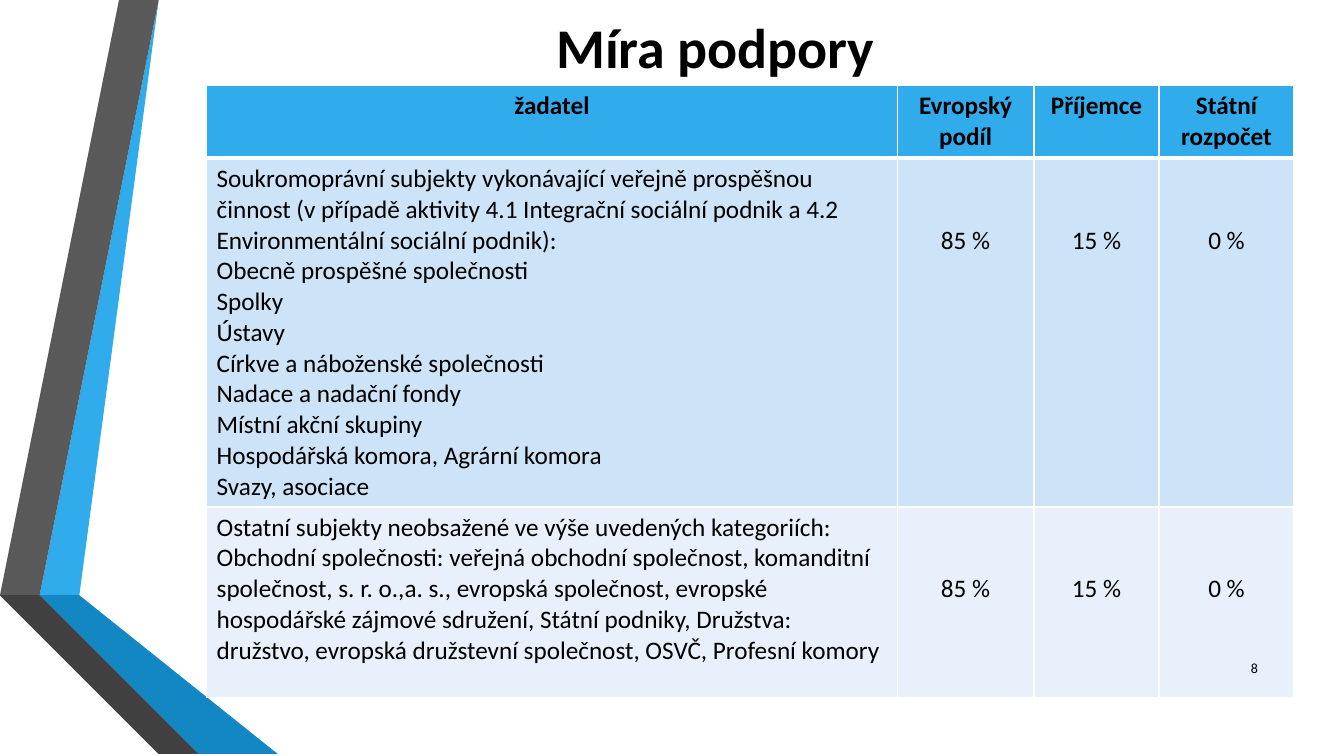
import pptx
import pptx.util
import pptx.dml.color
import pptx.enum.text
import pptx.oxml

Cm = pptx.util.Cm
Pt = pptx.util.Pt
ALIGN = pptx.enum.text.PP_ALIGN
ANCHOR = pptx.enum.text.MSO_ANCHOR
NS = "http://schemas.openxmlformats.org/drawingml/2006/main"

COLORS = {
    "black": "000000", "white": "FFFFFF", "blue": "30ACEC",
    "mid_blue": "1287C3", "deep_blue": "0C5A82", "grey": "595959",
    "dark_grey": "404040", "shadow_grey": "262626",
    "band_dark": "CDE3F8", "band_light": "E8F1FB",
}

RIBBONS = [
    ("blue", [(1.27, 14.68), (1.96, 14.81), (4.39, 0), (3.68, 0)]),
    ("grey", [(3.53, 0), (2.82, 0), (0.41, 14.55), (1.12, 14.66)]),
    ("shadow_grey", [(0.41, 14.55), (3.68, 19.05), (3.84, 19.05)]),
    ("deep_blue", [(1.27, 14.71), (5.28, 19.05), (5.44, 19.05)]),
    ("mid_blue", [(1.27, 14.68), (5.44, 19.05), (7.19, 19.05), (1.96, 14.81)]),
    ("dark_grey", [(5.13, 19.05), (1.22, 14.81), (1.09, 14.68), (1.12, 14.66),
                   (0.41, 14.55), (3.84, 19.05)]),
]

HEADERS = ["žadatel", "Evropský podíl", "Příjemce", "Státní rozpočet"]
SHARES = ["85 %", "15 %", "0 %"]
NONPROFITS = [
    "Soukromoprávní subjekty vykonávající veřejně prospěšnou činnost "
    "(v případě aktivity 4.1 Integrační sociální podnik a 4.2 "
    "Environmentální sociální podnik):",
    "Obecně prospěšné společnosti",
    "Spolky",
    "Ústavy",
    "Církve a náboženské společnosti",
    "Nadace a nadační fondy",
    "Místní akční skupiny",
    "Hospodářská komora, Agrární komora",
    "Svazy, asociace",
]
OTHERS = [
    "Ostatní subjekty neobsažené ve výše uvedených kategoriích:",
    "Obchodní společnosti: veřejná obchodní společnost, komanditní "
    "společnost, s. r. o.,a. s., evropská společnost, evropské "
    "hospodářské zájmové sdružení, Státní podniky, Družstva: "
    "družstvo, evropská družstevní společnost, OSVČ, Profesní komory",
]
COL_WIDTHS = [17.4, 3.45, 3.15, 3.4]
ROW_HEIGHTS = [1.83, 8.77, 4.8]


def rgb(name):
    return pptx.dml.color.RGBColor.from_string(COLORS[name])


def apply(obj, values):
    for name, value in values.items():
        setattr(obj, name, value)


def write(tf, lines, align, size, bold=False):
    for i, line in enumerate(lines):
        p = tf.paragraphs[0] if i == 0 else tf.add_paragraph()
        p.alignment = align
        r = p.add_run()
        r.text = line
        apply(r.font, {"name": "Calibri", "size": Pt(size), "bold": bold})
        r.font.color.rgb = rgb("black")


def add_ribbon(s, color, points):
    builder = s.shapes.build_freeform(*points[0], scale=Cm(1))
    builder.add_line_segments(points[1:], close=True)
    sp = builder.convert_to_shape()
    sp.shadow.inherit = False
    sp.fill.solid()
    sp.fill.fore_color.rgb = rgb(color)
    sp.line.fill.background()


def set_borders(cell, widths):
    tc_pr = cell._tc.get_or_add_tcPr()
    for i, (side, width) in enumerate(widths.items()):
        tc_pr.insert(i, pptx.oxml.parse_xml(
            f'<a:ln{side} xmlns:a="{NS}" w="{Pt(width)}"><a:solidFill>'
            f'<a:srgbClr val="{COLORS["white"]}"/></a:solidFill></a:ln{side}>'))


def fill_cell(cell, row, lines, align, color, top):
    apply(cell, {"margin_left": Cm(0.25), "margin_right": Cm(0.25),
                 "margin_top": Cm(top), "margin_bottom": Cm(0.13),
                 "vertical_anchor": ANCHOR.TOP})
    write(cell.text_frame, lines, align, 18, bold=row == 0)
    cell.fill.solid()
    cell.fill.fore_color.rgb = rgb(color)
    set_borders(cell, {"L": 1, "R": 1, "T": 3 if row == 1 else 1,
                       "B": 3 if row == 0 else 1})


def add_support_table(s):
    rows = [[[h] for h in HEADERS]]
    rows += [[group] + [[share] for share in SHARES]
             for group in (NONPROFITS, OTHERS)]
    table = s.shapes.add_table(len(rows), len(HEADERS), Cm(5.21), Cm(2.16),
                               Cm(sum(COL_WIDTHS)), Cm(sum(ROW_HEIGHTS))).table
    for column, width in zip(table.columns, COL_WIDTHS):
        column.width = Cm(width)
    for row, height in zip(table.rows, ROW_HEIGHTS):
        row.height = Cm(height)
    for i, (row, color) in enumerate(zip(rows, ("blue", "band_dark", "band_light"))):
        for j, lines in enumerate(row):
            align = ALIGN.LEFT if i and j == 0 else ALIGN.CENTER
            top = 1.68 if i and j else 0.13
            fill_cell(table.cell(i, j), i, lines, align, color, top)


def place_title(s, text):
    sp = s.shapes.title
    apply(sp, {"left": Cm(4.11), "top": Cm(0), "width": Cm(27.84), "height": Cm(2.31)})
    apply(sp.text_frame, {"vertical_anchor": ANCHOR.MIDDLE, "word_wrap": True,
                          "auto_size": pptx.enum.text.MSO_AUTO_SIZE.NONE})
    write(sp.text_frame, [text], ALIGN.CENTER, 40, bold=True)


def add_page_number(s, text):
    tf = s.shapes.add_textbox(Cm(30.43), Cm(16.33), Cm(1.52), Cm(1.02)).text_frame
    apply(tf, {"word_wrap": True, "vertical_anchor": ANCHOR.MIDDLE})
    write(tf, [text], ALIGN.RIGHT, 10)


def main():
    prs = pptx.Presentation()
    apply(prs, {"slide_width": Cm(33.87), "slide_height": Cm(19.05)})
    s = prs.slides.add_slide(prs.slide_layouts[5])
    for color, points in RIBBONS:
        add_ribbon(s, color, points)
    place_title(s, "Míra podpory")
    add_support_table(s)
    add_page_number(s, "8")
    prs.save("out.pptx")


if __name__ == "__main__":
    main()
